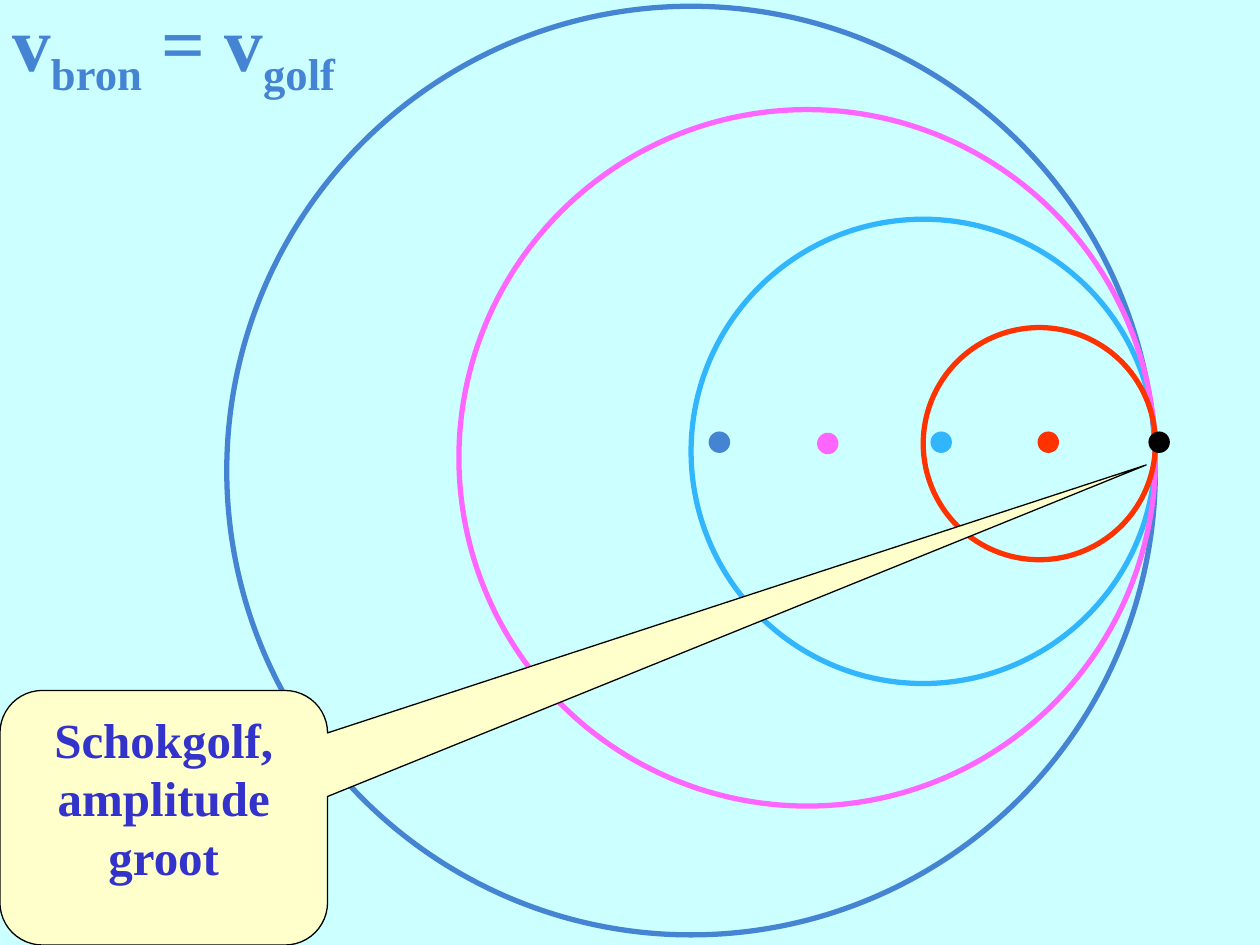
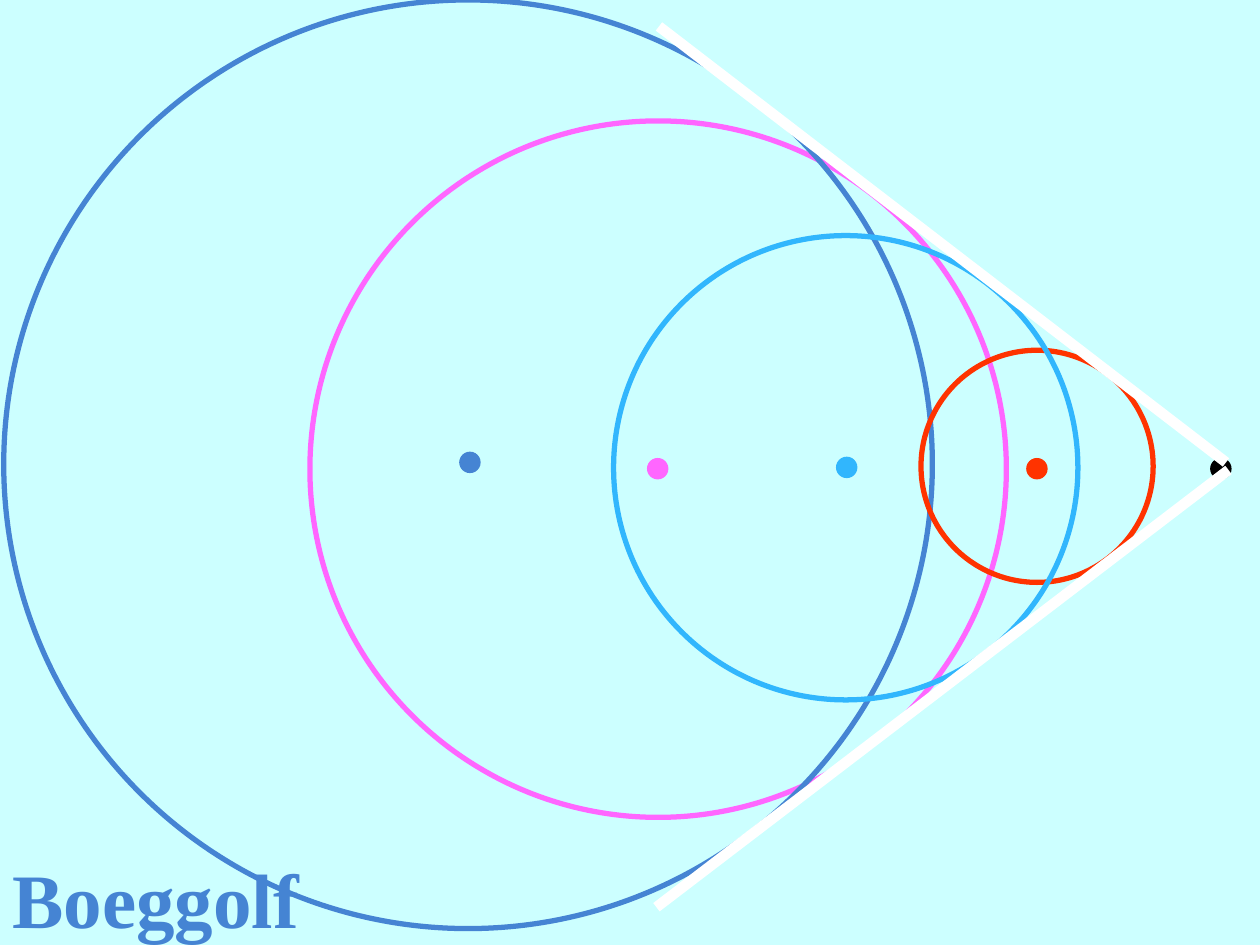
"""Build two slides on wave fronts: a source at wave speed and a bow wave."""
from dataclasses import dataclass

from lxml.etree import SubElement
from pptx import Presentation
from pptx.dml.color import RGBColor as RGB
from pptx.enum.shapes import MSO_CONNECTOR as Connector, MSO_SHAPE as Shape
from pptx.enum.text import MSO_ANCHOR as Anchor, PP_ALIGN as Align
from pptx.oxml.ns import qn
from pptx.util import Inches, Pt


@dataclass(frozen=True)
class Theme:
    background: RGB = RGB.from_string("CCFFFF")
    blue: RGB = RGB.from_string("4584D3")
    pink: RGB = RGB.from_string("FF66FF")
    sky: RGB = RGB.from_string("31B6FD")
    red: RGB = RGB.from_string("FF3300")
    black: RGB = RGB.from_string("000000")
    white: RGB = RGB.from_string("FFFFFF")
    note_fill: RGB = RGB.from_string("FFFFCC")
    note_text: RGB = RGB.from_string("3333CC")
    font: str = "Times New Roman"
    title_size: int = 44
    note_size: int = 28
    thin: float = 0.75
    wave: float = 3
    front: float = 6


theme = Theme()
SOURCE_SIZE = 0.16
WAVE_STEP = 1.8425
wave_size = {
    color: WAVE_STEP * count
    for count, color in enumerate((theme.red, theme.sky, theme.pink, theme.blue), 1)
}


def write(paragraph, text, *, size, color, align=Align.LEFT, baseline=0):
    paragraph.alignment = align
    run = paragraph.add_run()
    run.text = text
    run.font.name = theme.font
    run.font.size = Pt(size)
    run.font.bold = True
    run.font.color.rgb = color
    if baseline:
        run.font._element.set("baseline", str(baseline * 1000))


def draw_circle(slide, left, top, size, color, solid=False):
    circle = slide.shapes.add_shape(
        Shape.OVAL, Inches(left), Inches(top), Inches(size), Inches(size))
    circle.shadow.inherit = False
    circle.line.color.rgb = color
    circle.line.width = Pt(theme.thin if solid else theme.wave)
    if solid:
        circle.fill.solid()
        circle.fill.fore_color.rgb = color
    else:
        circle.fill.background()


deck = Presentation()
deck.slide_width, deck.slide_height = Inches(10), Inches(7.5)

slides = []
for title_top, title_width, title_parts in (
    (0, 3.35, (("v", 0), ("bron", -25), (" = v", 0), ("golf", -25))),
    (6.75, 2.83, (("Boeggolf", 0),)),
):
    slide = deck.slides.add_slide(deck.slide_layouts[6])
    slide.background.fill.solid()
    slide.background.fill.fore_color.rgb = theme.background
    title = slide.shapes.add_textbox(
        0, Inches(title_top), Inches(title_width), Inches(0.75)).text_frame
    title.word_wrap = True
    title.vertical_anchor = Anchor.MIDDLE
    for part, baseline in title_parts:
        write(title.paragraphs[0], part, size=theme.title_size,
              color=theme.blue, baseline=baseline)
    slides.append(slide)
shock_slide, bow_slide = slides

SHOCK_EDGE = 9.17
for color, top in ((theme.blue, 0.05), (theme.sky, 1.74), (theme.pink, 0.87)):
    size = wave_size[color]
    draw_circle(shock_slide, SHOCK_EDGE - size, top, size, color)
for color, left, top in (
    (theme.pink, 6.49, 3.44),
    (theme.blue, 5.63, 3.43),
    (theme.sky, 7.39, 3.43),
    (theme.red, 8.24, 3.43),
):
    draw_circle(shock_slide, left, top, SOURCE_SIZE, color, solid=True)
size = wave_size[theme.red]
draw_circle(shock_slide, SHOCK_EDGE - size, 2.6, size, theme.red)
draw_circle(shock_slide, 9.12, 3.43, SOURCE_SIZE, theme.black, solid=True)

shock_note = shock_slide.shapes.add_shape(
    Shape.ROUNDED_RECTANGULAR_CALLOUT, 0, Inches(5.48), Inches(2.6), Inches(2.02))
shock_note.shadow.inherit = False
for index, value in enumerate((2.999, -1.386, 0.167)):
    shock_note.adjustments[index] = value
shock_note.fill.solid()
shock_note.fill.fore_color.rgb = theme.note_fill
shock_note.line.color.rgb = theme.black
shock_note.line.width = Pt(theme.thin)
note_frame = shock_note.text_frame
note_frame.word_wrap = True
note_frame.vertical_anchor = Anchor.TOP
for paragraph, text in (
    (note_frame.paragraphs[0], "Schokgolf,"),
    (note_frame.add_paragraph(), "amplitude groot"),
):
    write(paragraph, text, size=theme.note_size, color=theme.note_text,
          align=Align.CENTER)

draw_circle(bow_slide, 9.61, 3.64, SOURCE_SIZE, theme.black, solid=True)
for color, wave_left, wave_top, source_left, source_top in (
    (theme.pink, 2.46, 0.96, 5.14, 3.64),
    (theme.blue, 0.03, 0, 3.65, 3.59),
    (theme.red, 7.31, 2.78, 8.15, 3.64),
    (theme.sky, 4.87, 1.87, 6.64, 3.63),
):
    draw_circle(bow_slide, wave_left, wave_top, wave_size[color], color)
    draw_circle(bow_slide, source_left, source_top, SOURCE_SIZE, color, solid=True)

for ends in ((9.73, 3.67, 5.23, 0.21), (9.75, 3.73, 5.21, 7.2)):
    wave_front = bow_slide.shapes.add_connector(
        Connector.STRAIGHT, *(Inches(end) for end in ends))
    wave_front.line.color.rgb = theme.white
    wave_front.line.width = Pt(theme.front)
    SubElement(wave_front._element.spPr, qn("a:effectLst"))

deck.save("out.pptx")
